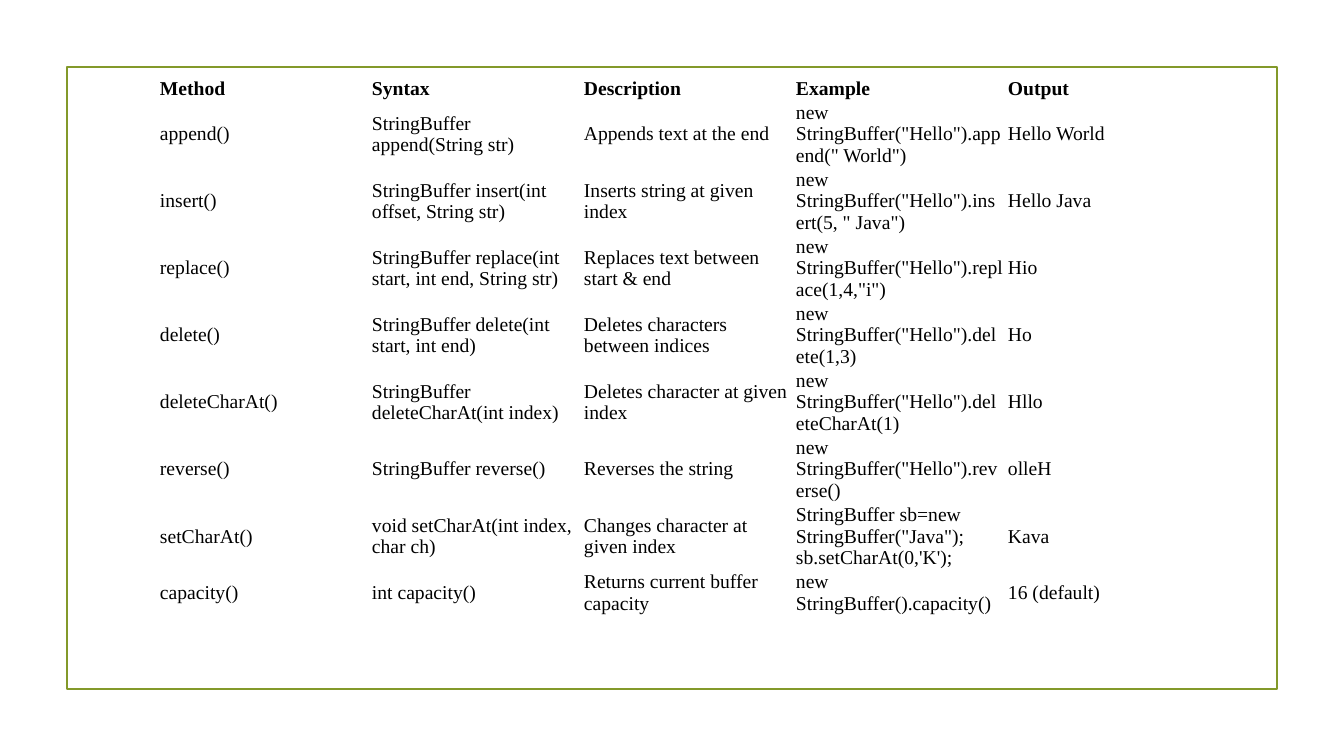
import pptx
import pptx.dml.color
import pptx.enum.shapes
import pptx.enum.text
import pptx.util
from dataclasses import dataclass


@dataclass(frozen=True)
class Theme:
    text: str = "000000"
    frame: str = "83992A"
    font: str = "Times New Roman"
    text_size: int = 14
    frame_width: float = 1.25


THEME = Theme()
EMU_PER_PX = 914400 / 100.8

HEADINGS = ("Method", "Syntax", "Description", "Example", "Output")
METHODS = (
    ("append()", "StringBuffer append(String str)", "Appends text at the end",
     'new StringBuffer("Hello").append(" World")', "Hello World"),
    ("insert()", "StringBuffer insert(int offset, String str)",
     "Inserts string at given index",
     'new StringBuffer("Hello").insert(5, " Java")', "Hello Java"),
    ("replace()", "StringBuffer replace(int start, int end, String str)",
     "Replaces text between start & end",
     'new StringBuffer("Hello").replace(1,4,"i")', "Hio"),
    ("delete()", "StringBuffer delete(int start, int end)",
     "Deletes characters between indices",
     'new StringBuffer("Hello").delete(1,3)', "Ho"),
    ("deleteCharAt()", "StringBuffer deleteCharAt(int index)",
     "Deletes character at given index",
     'new StringBuffer("Hello").deleteCharAt(1)', "Hllo"),
    ("reverse()", "StringBuffer reverse()", "Reverses the string",
     'new StringBuffer("Hello").reverse()', "olleH"),
    ("setCharAt()", "void setCharAt(int index, char ch)",
     "Changes character at given index",
     "StringBuffer sb=new StringBuffer(\"Java\"); sb.setCharAt(0,'K');", "Kava"),
    ("capacity()", "int capacity()", "Returns current buffer capacity",
     "new StringBuffer().capacity()", "16 (default)"),
)
ROW_HEIGHTS = (23, *[66] * 7, 45)


def px(length):
    return pptx.util.Emu(round(length * EMU_PER_PX))


def color(value):
    return pptx.dml.color.RGBColor.from_string(value)


def add_frame(slide, left, top, width, height):
    shape = slide.shapes.add_shape(
        pptx.enum.shapes.MSO_SHAPE.RECTANGLE,
        px(left), px(top), px(width), px(height))
    shape.shadow.inherit = False
    shape.fill.background()
    shape.line.color.rgb = color(THEME.frame)
    shape.line.width = pptx.util.Pt(THEME.frame_width)


def fill_cell(cell, text, bold):
    cell.fill.background()
    cell.vertical_anchor = pptx.enum.text.MSO_ANCHOR.MIDDLE
    cell.margin_left = cell.margin_right = px(2)
    cell.margin_top = cell.margin_bottom = px(1)
    cell.text_frame.text = text
    for run in cell.text_frame.paragraphs[0].runs:
        run.font.name = THEME.font
        run.font.size = pptx.util.Pt(THEME.text_size)
        run.font.bold = bold
        run.font.color.rgb = color(THEME.text)


def add_method_table(slide, left, top, column_width):
    rows = (HEADINGS, *METHODS)
    table = slide.shapes.add_table(
        len(rows), len(HEADINGS), px(left), px(top),
        px(column_width * len(HEADINGS)), px(sum(ROW_HEIGHTS))).table
    table.first_row = True
    table.horz_banding = False
    for row, height in zip(table.rows, ROW_HEIGHTS):
        row.height = px(height)
    for row_index, texts in enumerate(rows):
        for column_index, text in enumerate(texts):
            fill_cell(table.cell(row_index, column_index), text, row_index == 0)


def main():
    presentation = pptx.Presentation()
    presentation.slide_width = px(1344)
    presentation.slide_height = px(756)
    slide = presentation.slides.add_slide(presentation.slide_layouts[6])
    add_frame(slide, 67, 67, 1210, 622)
    add_method_table(slide, 158, 77, 212)
    presentation.save("out.pptx")


if __name__ == "__main__":
    main()
